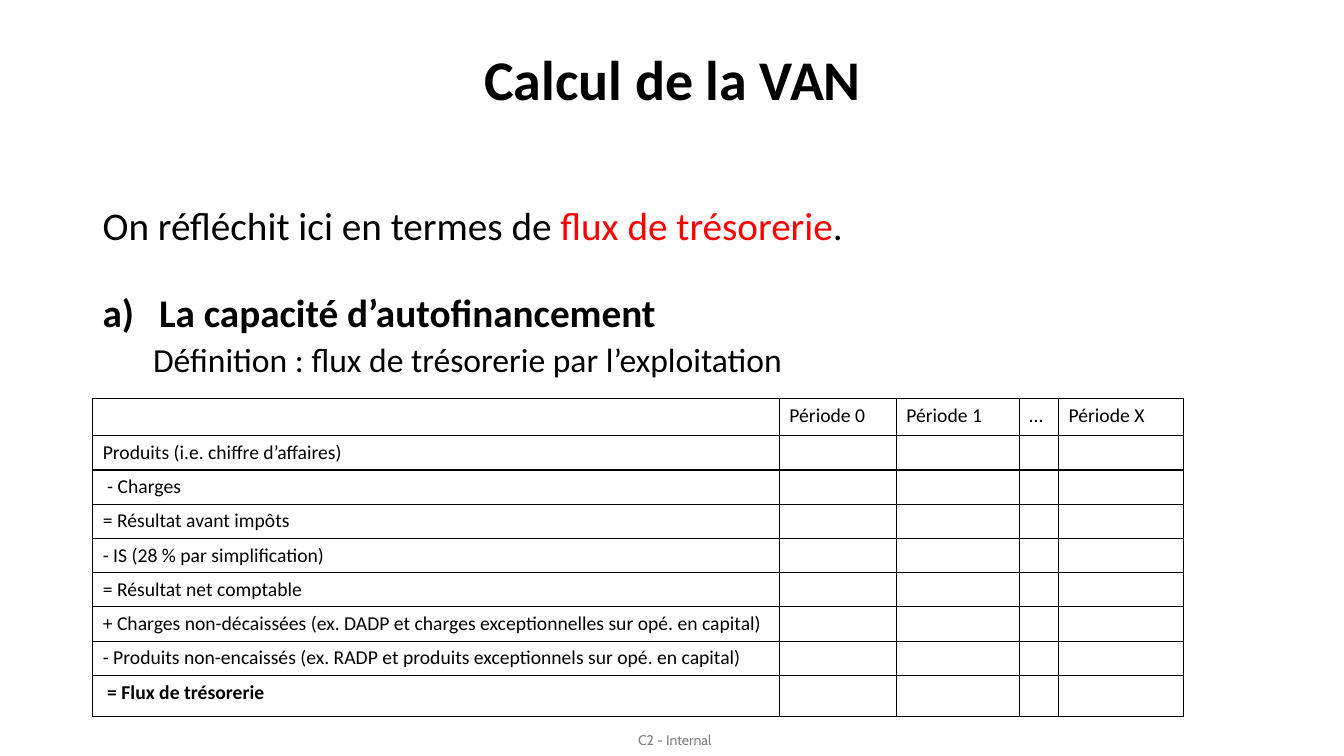
from dataclasses import dataclass

from lxml.etree import SubElement
from pptx import Presentation
from pptx.dml.color import RGBColor as Rgb
from pptx.enum.text import MSO_ANCHOR as Anchor, MSO_AUTO_SIZE as AutoSize, PP_ALIGN as Align
from pptx.oxml.ns import qn
from pptx.util import Inches, Pt


@dataclass(frozen=True)
class Theme:
    font: str = "Calibri"
    footer_font: str = "Cabin"
    ink: Rgb = Rgb(0, 0, 0)
    accent: Rgb = Rgb(255, 0, 0)
    muted: Rgb = Rgb(127, 127, 127)
    title: int = 40
    lead: int = 28
    detail: int = 24
    cell: int = 14
    footer: int = 10
    border: int = 1
    leading: float = 0.9


class SlideBuilder:
    WIDTH, HEIGHT = 13.33, 7.5

    def __init__(self, theme):
        self.theme = theme
        self.deck = Presentation()
        self.deck.slide_width = Inches(self.WIDTH)
        self.deck.slide_height = Inches(self.HEIGHT)
        self.slide = self.deck.slides.add_slide(self.deck.slide_layouts[5])

    def box(self, left, top, width, height):
        """Turn shares of the slide's size into lengths."""
        return (Inches(self.WIDTH * left), Inches(self.HEIGHT * top),
                Inches(self.WIDTH * width), Inches(self.HEIGHT * height))

    def style(self, paragraph, size, bold=False, color=None, font=None):
        face = paragraph.font
        face.name = font or self.theme.font
        face.size = Pt(size)
        face.bold = bold
        face.color.rgb = color or self.theme.ink

    def title(self, text, area, bottom_inset):
        heading = self.slide.shapes.title
        heading.left, heading.top, heading.width, heading.height = self.box(*area)
        frame = heading.text_frame
        frame.auto_size = AutoSize.NONE
        frame.vertical_anchor = Anchor.MIDDLE
        frame.margin_bottom = Inches(bottom_inset)
        frame.text = text
        line = frame.paragraphs[0]
        line.alignment = Align.CENTER
        line.line_spacing = self.theme.leading
        self.style(line, self.theme.title, bold=True)

    def text_frame(self, area):
        frame = self.slide.shapes.add_textbox(*self.box(*area)).text_frame
        frame.word_wrap = True
        return frame

    def paragraph(self, frame, parts, size, bold=False, before=0, indent=0, numbered=False):
        """Add one paragraph; parts are (text, color) pairs."""
        first = not frame.paragraphs[0].runs
        line = frame.paragraphs[0] if first else frame.add_paragraph()
        line.line_spacing = self.theme.leading
        if before:
            line.space_before = Pt(before)
        props = line._p.get_or_add_pPr()
        props.set("marL", str(Inches(indent)))
        props.set("indent", str(Inches(-indent if numbered else 0)))
        if numbered:
            SubElement(props, qn("a:buFont"), typeface="+mj-lt")
            SubElement(props, qn("a:buAutoNum"), type="alphaLcParenR")
        self.style(line, size, bold)
        for text, color in parts:
            run = line.add_run()
            run.text = text
            if color:
                run.font.color.rgb = color

    def borders(self, cell):
        props = cell._tc.get_or_add_tcPr()
        for side in ("L", "R", "T", "B"):
            edge = SubElement(props, qn(f"a:ln{side}"), w=str(Pt(self.theme.border)))
            fill = SubElement(edge, qn("a:solidFill"))
            SubElement(fill, qn("a:srgbClr"), val=str(self.theme.ink))

    def table(self, rows, left, top, widths, heights):
        area = self.box(left, top, sum(widths) / self.WIDTH, sum(heights) / self.HEIGHT)
        grid = self.slide.shapes.add_table(len(rows), len(widths), *area).table
        grid.first_row = grid.horz_banding = False
        for column, width in zip(grid.columns, widths):
            column.width = Inches(width)
        for r, (row, height) in enumerate(zip(rows, heights)):
            grid.rows[r].height = Inches(height)
            for c, text in enumerate(row):
                cell = grid.cell(r, c)
                self.borders(cell)
                cell.fill.background()
                cell.text = text
                line = cell.text_frame.paragraphs[0]
                self.style(line, self.theme.cell, bold=bool(text) and r == len(rows) - 1)
                if not text:  # keeps empty cells as low as filled ones
                    line._p.get_or_add_endParaRPr().set("sz", str(self.theme.cell * 100))

    def footer(self, text, area):
        frame = self.text_frame(area)
        frame.word_wrap = False
        frame.margin_left = frame.margin_right = frame.margin_top = frame.margin_bottom = 0
        frame.text = text
        line = frame.paragraphs[0]
        line.alignment = Align.CENTER
        self.style(line, self.theme.footer, color=self.theme.muted, font=self.theme.footer_font)


PERIODS = ["Période 0", "Période 1", "…", "Période X"]
CASH_FLOW_STEPS = [
    "Produits (i.e. chiffre d’affaires)",
    " - Charges",
    "= Résultat avant impôts",
    "- IS (28 % par simplification)",
    "= Résultat net comptable",
    "+ Charges non-décaissées (ex. DADP et charges exceptionnelles sur opé. en capital)",
    "- Produits non-encaissés (ex. RADP et produits exceptionnels sur opé. en capital)",
    " = Flux de trésorerie",
]
LEFT, CONTENT_WIDTH = 0.069, 0.863


def main():
    theme = Theme()
    page = SlideBuilder(theme)

    # Footer
    page.footer("C2 - Internal", (0.473, 0.968, 0.058, 0.023))

    # Title
    page.title("Calcul de la VAN", (LEFT, 0.053, CONTENT_WIDTH, 0.193), bottom_inset=0.66)

    # Introduction and definition
    intro = page.text_frame((LEFT, 0.267, CONTENT_WIDTH, 0.635))
    page.paragraph(intro, [("On réfléchit ici en termes de ", None),
                           ("flux de trésorerie", theme.accent), (".", None)], theme.lead)
    page.paragraph(intro, [("La capacité d’autofinancement", None)], theme.lead,
                   bold=True, before=32, indent=0.56, numbered=True)
    page.paragraph(intro, [("Définition : flux de trésorerie par l’exploitation", None)],
                   theme.detail, before=5, indent=0.5)

    # Cash flow table
    rows = [["", *PERIODS]] + [[step] + [""] * len(PERIODS) for step in CASH_FLOW_STEPS]
    heights = [0.37] + [0.34] * (len(rows) - 2) + [0.41]
    page.table(rows, LEFT, 0.527, [6.81, 1.16, 1.22, 0.39, 1.24], heights)

    page.deck.save("out.pptx")


if __name__ == "__main__":
    main()
